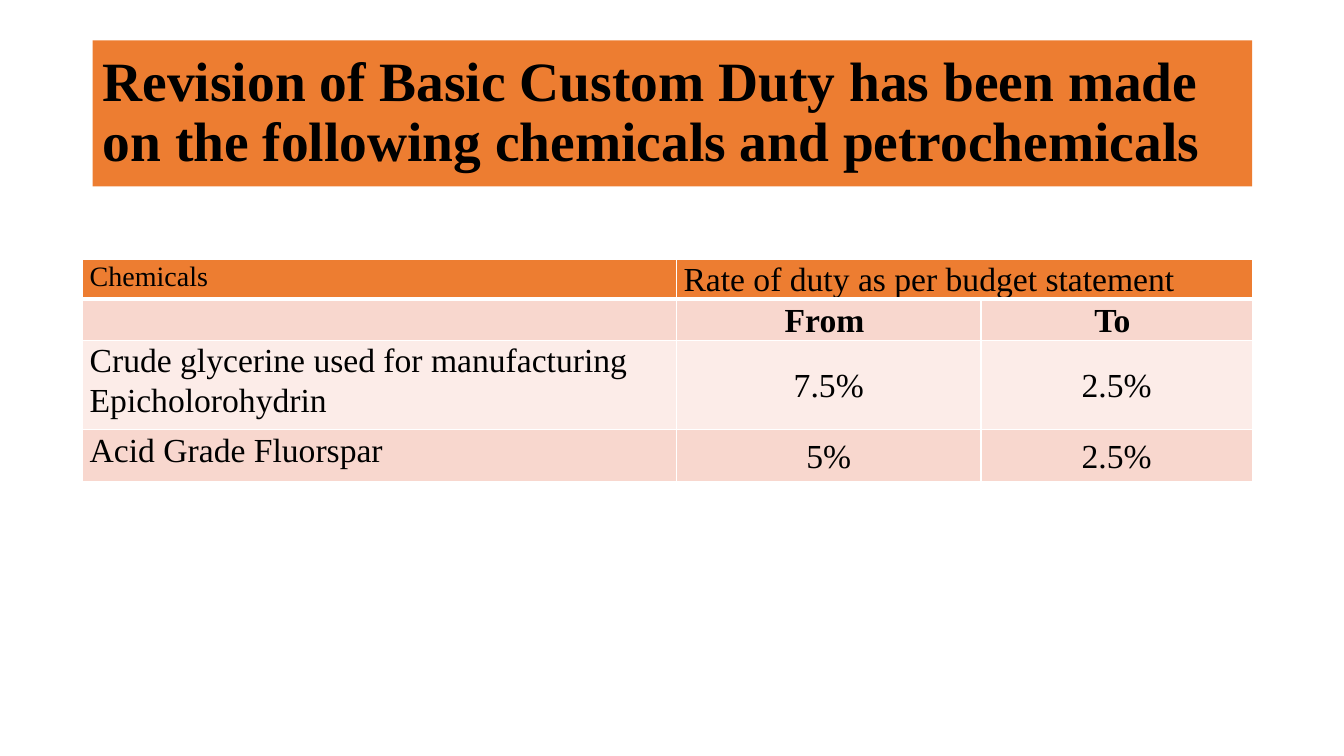
from lxml.etree import SubElement
from pptx import Presentation
from pptx.dml.color import RGBColor
from pptx.enum.shapes import MSO_SHAPE
from pptx.enum.text import MSO_ANCHOR, PP_ALIGN
from pptx.oxml.ns import qn
from pptx.util import Inches, Pt

# Content
TITLE = "Revision of Basic Custom Duty has been made on the following chemicals and petrochemicals"
ROWS = [
    ("Chemicals", "Rate of duty as per budget statement", ""),
    ("", "From ", "To "),
    ("Crude glycerine used for manufacturing Epicholorohydrin", "7.5%", "2.5%"),
    ("Acid Grade Fluorspar", "5%", "2.5%"),
]
COLUMN_WIDTHS = (5.89, 3.02, 2.69)
ROW_HEIGHTS = (0.39, 0.41, 0.89, 0.51)
COLORS = {"orange": "ED7D31", "dark_band": "F8D7CE", "light_band": "FCECE8",
          "text": "000000", "border": "FFFFFF"}
ROW_FILLS = ("orange", "dark_band", "light_band", "dark_band")
FONT = "Times New Roman"
CELL_FORMAT = {"margin_left": Inches(0.07), "margin_right": Inches(0.07),
               "margin_top": 0, "margin_bottom": 0}


def set_attributes(target, values):
    for name, value in values.items():
        setattr(target, name, value)


def set_fill(target, color):
    target.fill.solid()
    target.fill.fore_color.rgb = RGBColor.from_string(COLORS[color])


def write_text(paragraph, text, size, bold, paragraph_format):
    set_attributes(paragraph, paragraph_format)
    run = paragraph.add_run()
    run.text = text
    set_attributes(run.font, {"name": FONT, "size": Pt(size), "bold": bold})
    run.font.color.rgb = RGBColor.from_string(COLORS["text"])


def add_borders(cell, bottom_width):
    properties = cell._tc.get_or_add_tcPr()
    for side, width in (("L", 1), ("R", 1), ("T", 1), ("B", bottom_width)):
        line = SubElement(properties, qn(f"a:ln{side}"), w=str(Pt(width)))
        fill = SubElement(line, qn("a:solidFill"))
        SubElement(fill, qn("a:srgbClr"), val=COLORS["border"])


presentation = Presentation()
presentation.slide_width, presentation.slide_height = Inches(13.33), Inches(7.5)
slide = presentation.slides.add_slide(presentation.slide_layouts[6])

# Title banner
banner = slide.shapes.add_shape(MSO_SHAPE.RECTANGLE, Inches(0.92), Inches(0.4),
                                Inches(11.5), Inches(1.45))
banner.shadow.inherit = False
set_fill(banner, "orange")
banner.line.fill.background()
set_attributes(banner.text_frame, {"word_wrap": True, "vertical_anchor": MSO_ANCHOR.MIDDLE})
write_text(banner.text_frame.paragraphs[0], TITLE, 39.6, True,
           {"alignment": PP_ALIGN.LEFT, "line_spacing": 0.9})

# Duty table
table = slide.shapes.add_table(len(ROWS), len(COLUMN_WIDTHS), Inches(0.82), Inches(2.57),
                               Inches(sum(COLUMN_WIDTHS)), Inches(sum(ROW_HEIGHTS))).table
for column, width in zip(table.columns, COLUMN_WIDTHS):
    column.width = Inches(width)
for row, height in zip(table.rows, ROW_HEIGHTS):
    row.height = Inches(height)
table.cell(0, 1).merge(table.cell(0, 2))

for row_index, texts in enumerate(ROWS):
    is_header = row_index == 0
    for column_index, text in enumerate(texts):
        is_rate = column_index > 0
        cell = table.cell(row_index, column_index)
        add_borders(cell, 3 if is_header else 1)
        set_fill(cell, ROW_FILLS[row_index])
        set_attributes(cell, CELL_FORMAT)
        cell.vertical_anchor = MSO_ANCHOR.MIDDLE if is_rate else MSO_ANCHOR.TOP
        if text:
            centered = is_rate and not is_header
            write_text(cell.text_frame.paragraphs[0], text,
                       20 if is_header and not is_rate else 24, row_index == 1,
                       {"alignment": PP_ALIGN.CENTER if centered else PP_ALIGN.LEFT,
                        "line_spacing": 1.07, "space_after": Pt(8 if is_rate else 0)})

presentation.save("out.pptx")
